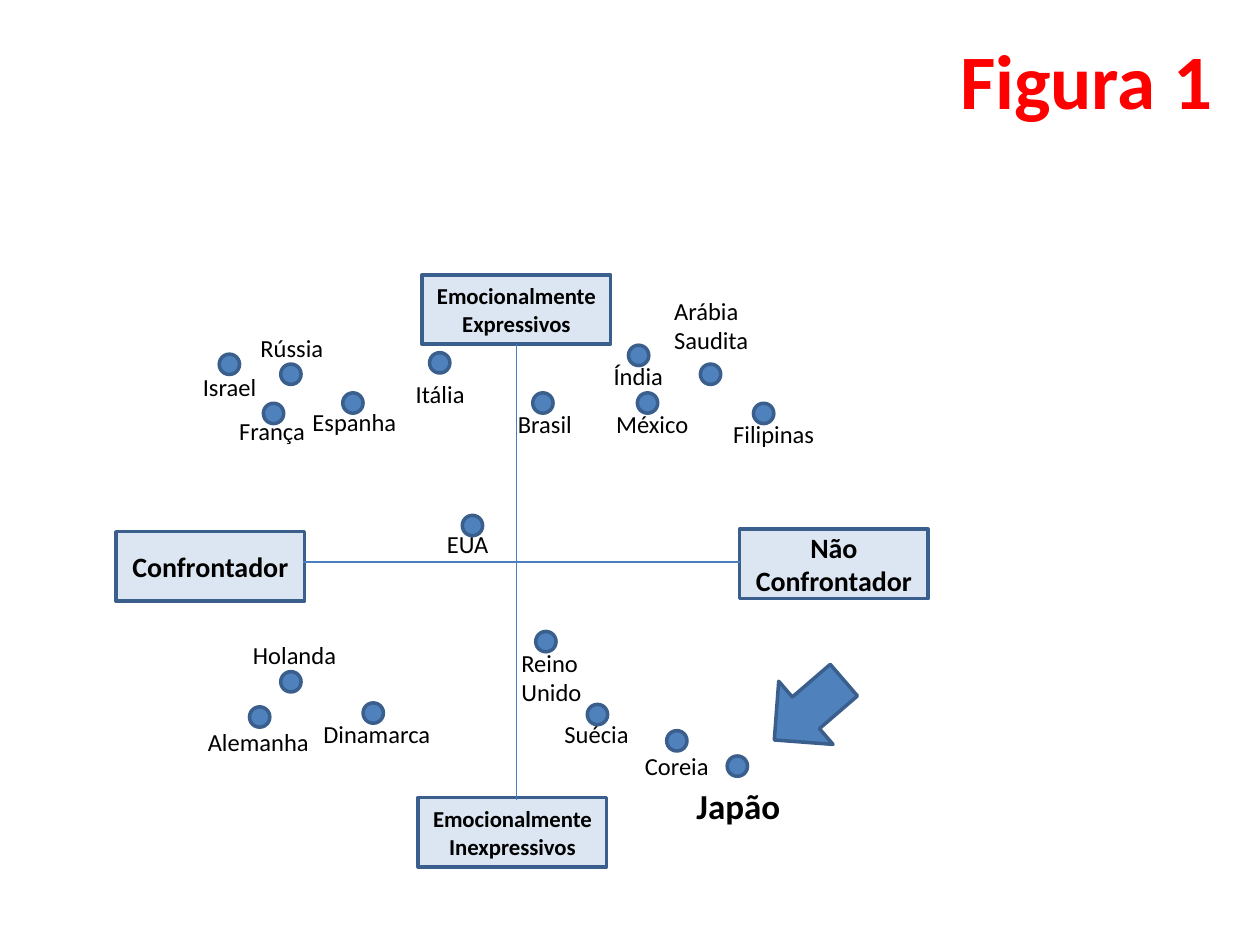
"""Build a map of countries by emotional expression and confrontation."""
from dataclasses import dataclass

from lxml import etree
from pptx import Presentation
from pptx import util as u
from pptx.dml.color import RGBColor
from pptx.enum import shapes, text
from pptx.oxml.ns import qn

BLACK = RGBColor(0x00, 0x00, 0x00)
RED = RGBColor(0xFF, 0x00, 0x00)
PALE_BLUE = RGBColor(0xDC, 0xE6, 0xF2)
BLUE = RGBColor(0x4F, 0x81, 0xBD)
DARK_BLUE = RGBColor(0x3A, 0x5F, 0x8C)
AXIS_BLUE = RGBColor(0x4B, 0x7E, 0xBC)
FONT = "Calibri"
BOX_WIDTH, BOX_HEIGHT = 3.8, 1.4
DOT_SIZE = 0.41


@dataclass(frozen=True)
class Pole:
    lines: tuple[str, ...]
    left: float
    top: float
    size: int


@dataclass(frozen=True)
class Country:
    lines: tuple[str, ...]
    dot: tuple[float, float]
    label: tuple[float, float]
    width: float
    size: int = 14
    bold: bool = False


CONFRONTING = Pole(("Confrontador",), 2.34, 10.72, 16)
AVOIDING = Pole(("Não Confrontador",), 14.91, 10.67, 16)
INEXPRESSIVE = Pole(("Emocionalmente", "Inexpressivos"), 8.43, 16.08, 13)
EXPRESSIVE = Pole(("Emocionalmente", "Expressivos"), 8.51, 5.54, 13)

COUNTRIES = (
    Country(("Israel",), (4.42, 7.14), (3.84, 7.37), 1.6),
    Country(("Rússia",), (5.66, 7.34), (5, 6.58), 1.8),
    Country(("França",), (5.31, 8.13), (4.57, 8.26), 1.85),
    Country(("Espanha",), (6.91, 7.92), (6.05, 8.08), 2.24),
    Country(("Itália",), (8.66, 7.11), (8.13, 7.52), 1.52),
    Country(("EUA",), (9.32, 10.39), (8.76, 10.54), 1.35),
    Country(("Brasil",), (10.74, 7.92), (10.19, 8.13), 1.63),
    Country(("México",), (12.85, 7.92), (12.17, 8.13), 1.98),
    Country(("Arábia", "Saudita"), (14.12, 7.34), (13.34, 5.84), 2.03),
    Country(("Índia",), (12.67, 6.96), (12.12, 7.16), 1.52),
    Country(("Filipinas",), (15.19, 8.13), (14.53, 8.33), 2.16),
    Country(("Reino", "Unido"), (10.8, 12.73), (10.26, 12.93), 1.73),
    Country(("Japão",), (14.66, 15.24), (13.79, 15.7), 2.21, 20, True),
    Country(("Suécia",), (11.84, 14.2), (11.13, 14.38), 1.83),
    Country(("Coreia",), (13.44, 14.73), (12.75, 15.01), 1.8),
    Country(("Holanda",), (5.66, 13.54), (4.85, 12.78), 2.21),
    Country(("Dinamarca",), (7.32, 14.17), (6.27, 14.38), 2.69),
    Country(("Alemanha",), (5.03, 14.25), (3.94, 14.53), 2.57),
)


def write_lines(frame, lines: tuple[str, ...], size: int, bold: bool,
                color: RGBColor = BLACK, align=text.PP_ALIGN.LEFT) -> None:
    """Write each line as a paragraph holding one run."""
    for index, line in enumerate(lines):
        paragraph = frame.add_paragraph() if index else frame.paragraphs[0]
        paragraph.alignment = align
        run = paragraph.add_run()
        run.text = line
        run.font.name = FONT
        run.font.size = u.Pt(size)
        run.font.bold = bold
        run.font.color.rgb = color


def fit_frame(frame) -> None:
    """Let a text frame grow with its unwrapped text."""
    frame.word_wrap = False
    frame.auto_size = text.MSO_AUTO_SIZE.SHAPE_TO_FIT_TEXT
    frame.vertical_anchor = text.MSO_ANCHOR.TOP


def add_outlined(slide, kind, left: float, top: float, width: float,
                 height: float, fill: RGBColor):
    """Add a filled preset shape with the dark blue outline."""
    shape = slide.shapes.add_shape(
        kind, u.Cm(left), u.Cm(top), u.Cm(width), u.Cm(height))
    shape.shadow.inherit = False
    shape.fill.solid()
    shape.fill.fore_color.rgb = fill
    shape.line.color.rgb = DARK_BLUE
    shape.line.width = u.Pt(2)
    return shape


def add_pole(slide, pole: Pole):
    """Add the box naming one end of an axis."""
    box = add_outlined(slide, shapes.MSO_SHAPE.RECTANGLE, pole.left, pole.top,
                       BOX_WIDTH, BOX_HEIGHT, PALE_BLUE)
    box.text_frame.word_wrap = True
    box.text_frame.vertical_anchor = text.MSO_ANCHOR.MIDDLE
    write_lines(box.text_frame, pole.lines, pole.size, True,
                align=text.PP_ALIGN.CENTER)
    return box


def add_axis(slide, start: tuple[float, float], end: tuple[float, float]):
    """Add a thin straight axis."""
    axis = slide.shapes.add_connector(
        shapes.MSO_CONNECTOR.STRAIGHT, *map(u.Cm, start + end))
    axis.line.color.rgb = AXIS_BLUE
    axis.line.width = u.Pt(0.75)
    etree.SubElement(axis._element.spPr, qn("a:effectLst"))
    return axis


def add_country(slide, country: Country) -> None:
    """Add the dot and the label of one country."""
    add_outlined(slide, shapes.MSO_SHAPE.OVAL, *country.dot,
                 DOT_SIZE, DOT_SIZE, BLUE)
    height = 0.25 + len(country.lines) * country.size * 0.043
    label = slide.shapes.add_textbox(
        *map(u.Cm, country.label), u.Cm(country.width), u.Cm(height))
    fit_frame(label.text_frame)
    write_lines(label.text_frame, country.lines, country.size, country.bold)


def add_title(slide) -> None:
    """Place and format the title."""
    title = slide.shapes.title
    title.left, title.top = u.Cm(19.1), u.Cm(0.53)
    title.width, title.height = u.Cm(5.64), u.Cm(2.13)
    fit_frame(title.text_frame)
    write_lines(title.text_frame, ("Figura 1",), 44, True, RED)


def main() -> None:
    """Build and save the presentation."""
    presentation = Presentation()
    presentation.slide_width = u.Cm(25.4)
    presentation.slide_height = u.Cm(19.05)
    slide = presentation.slides.add_slide(presentation.slide_layouts[5])
    add_title(slide)
    for pole in (CONFRONTING, AVOIDING, INEXPRESSIVE):
        add_pole(slide, pole)
    expressive_box = add_pole(slide, EXPRESSIVE)
    add_axis(slide, (6.1, 11.33), (14.91, 11.33))
    expression_axis = add_axis(slide, (10.41, 6.94), (10.41, 16.13))
    expression_axis.begin_connect(expressive_box, 2)
    for country in COUNTRIES:
        add_country(slide, country)
    arrow = add_outlined(slide, shapes.MSO_SHAPE.DOWN_ARROW,
                         15.47, 13.39, 1.68, 1.85, BLUE)
    arrow.rotation = 49.3
    presentation.save("out.pptx")


if __name__ == "__main__":
    main()
